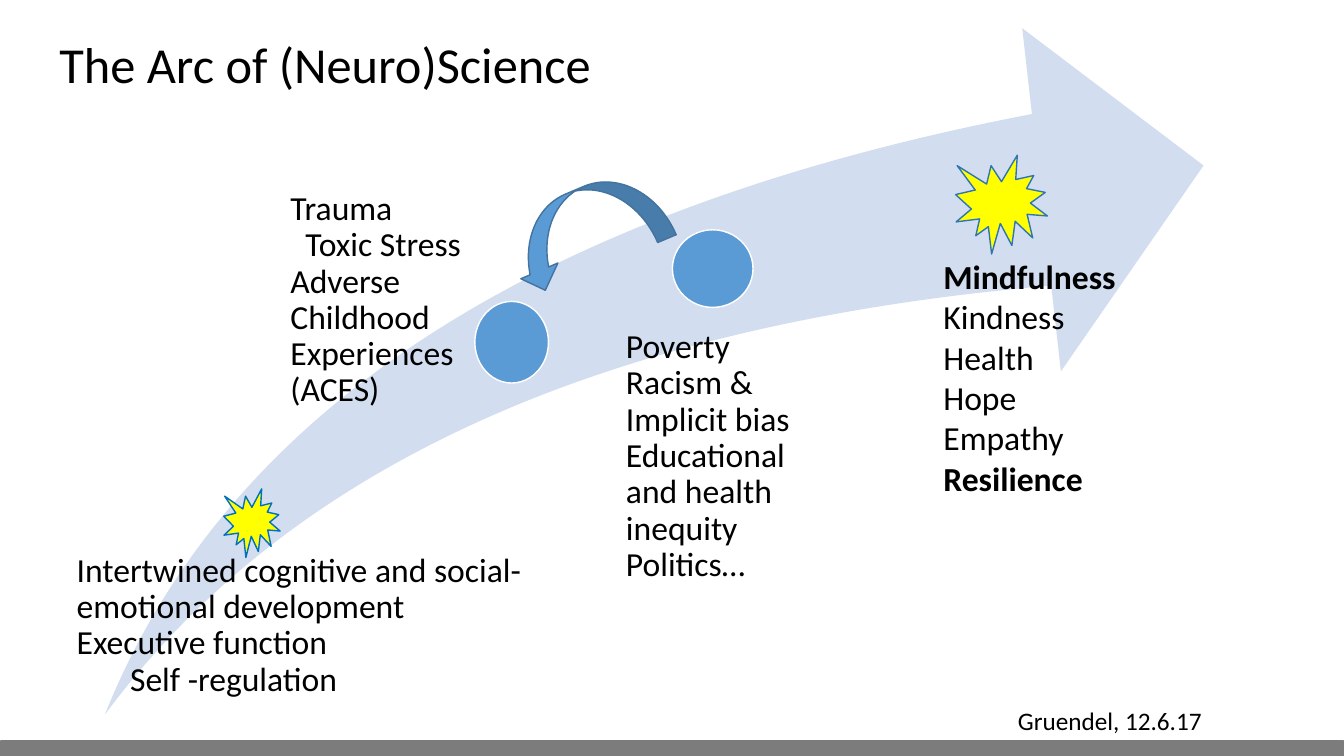
import pptx
import pptx.dml.color
import pptx.enum.shapes
import pptx.enum.text
import pptx.util

RGBColor = pptx.dml.color.RGBColor
SHAPE = pptx.enum.shapes.MSO_SHAPE

BLACK = RGBColor(0x00, 0x00, 0x00)
WHITE = RGBColor(0xFF, 0xFF, 0xFF)
GREY = RGBColor(0x7C, 0x7C, 0x7C)
PALE_BLUE = RGBColor(0xD2, 0xDE, 0xEF)
BLUE = RGBColor(0x5B, 0x9B, 0xD5)
STEEL_BLUE = RGBColor(0x43, 0x73, 0x9E)
BRIGHT_BLUE = RGBColor(0x00, 0x70, 0xC0)
DEEP_BLUE = RGBColor(0x2E, 0x75, 0xB6)
YELLOW = RGBColor(0xFF, 0xFF, 0x00)


class ArcSlide:
    """Places elements by percent of the slide's width and height."""

    font = "Calibri"

    def __init__(self, deck):
        self.width, self.height = deck.slide_width, deck.slide_height
        self.page = deck.slides.add_slide(deck.slide_layouts[6])

    def frame(self, left, top, width, height):
        return (int(left * self.width / 100), int(top * self.height / 100),
                int(width * self.width / 100), int(height * self.height / 100))

    def shape(self, kind, place, fill, line=None, rotation=0):
        shape = self.page.shapes.add_shape(kind, *self.frame(*place))
        shape.shadow.inherit = False
        shape.rotation = rotation
        shape.fill.solid()
        shape.fill.fore_color.rgb = fill
        if line is None:
            shape.line.fill.background()
        else:
            shape.line.color.rgb = line
            shape.line.width = pptx.util.Pt(1)
        return shape

    def text(self, lines, place, size=24, spacing=1.0, insets=(0.1, 0.05, 0.1, 0.05),
             wrap=True, bold=(), indents=None):
        """bold lists line texts; indents maps a line's text to inches."""
        box = self.page.shapes.add_textbox(*self.frame(*place))
        body = box.text_frame
        body.word_wrap = wrap
        body.vertical_anchor = pptx.enum.text.MSO_ANCHOR.TOP
        (body.margin_left, body.margin_top, body.margin_right,
         body.margin_bottom) = [pptx.util.Inches(inset) for inset in insets]
        for number, line in enumerate(lines):
            para = body.add_paragraph() if number else body.paragraphs[0]
            if indents and line in indents:
                para_format = para._p.get_or_add_pPr()
                para_format.set("marL", str(pptx.util.Inches(indents[line])))
            para.line_spacing = spacing
            span = para.add_run()
            span.text = line
            span.font.name = self.font
            span.font.size = pptx.util.Pt(size)
            span.font.bold = line in bold
            span.font.color.rgb = BLACK

    def label(self, lines, place, inset, indents=None):
        """Tightly set text beside a point on the arc."""
        self.text(lines, place, spacing=0.9, insets=(inset, 0, 0, 0), indents=indents)


def main():
    deck = pptx.Presentation()
    deck.slide_width = pptx.util.Inches(13.33)
    deck.slide_height = pptx.util.Inches(7.5)
    arc = ArcSlide(deck)

    arc.shape(SHAPE.RECTANGLE, (0.08, 98, 99.9, 2), GREY, GREY)
    swoosh = arc.shape(SHAPE.SWOOSH_ARROW, (7.8, 3.73, 81.75, 90.8), PALE_BLUE)
    swoosh.adjustments[0] = 0.25
    swoosh.adjustments[1] = 0.25

    arc.shape(SHAPE.EXPLOSION1, (16.65, 64.67, 4.2, 9.07), YELLOW, BRIGHT_BLUE)
    arc.label(["Intertwined cognitive and social- emotional development",
               "Executive function", "Self -regulation"],
              (4.73, 73.2, 36.45, 17.47), 0.13, {"Self -regulation": 0.53})

    arc.shape(SHAPE.OVAL, (35.33, 39.87, 5.48, 10.8), BLUE, WHITE)
    arc.label(["Trauma", "Toxic Stress", "Adverse Childhood Experiences", "(ACES)"],
              (19.88, 25.33, 17.18, 41.47), 0.23, {"Toxic Stress": 0.15})

    arc.shape(SHAPE.OVAL, (50.03, 30.4, 6, 10.27), BLUE, WHITE)
    arc.label(["Poverty", "Racism &", "Implicit bias", "Educational",
               "and health", "inequity", "Politics…"],
              (44.25, 43.6, 18.38, 33.2), 0.31)

    arc.shape(SHAPE.EXPLOSION1, (71.1, 20.53, 6.83, 13.07), YELLOW, DEEP_BLUE)
    arc.text(["Mindfulness", "Kindness", "Health", "Hope", "Empathy", "Resilience"],
             (69.45, 33.2, 15, 33.6), bold=("Mindfulness", "Resilience"))

    arc.text(["The Arc of (Neuro)Science"], (3.68, 3.73, 41.4, 9.47), size=36, wrap=False)
    arc.text(["Gruendel, 12.6.17"], (75, 92.67, 15.38, 5.33), size=18, wrap=False)
    arc.shape(SHAPE.CURVED_RIGHT_ARROW, (40.58, 19.6, 6, 21.47), BLUE, STEEL_BLUE, rotation=67)

    deck.save("out.pptx")


if __name__ == "__main__":
    main()
